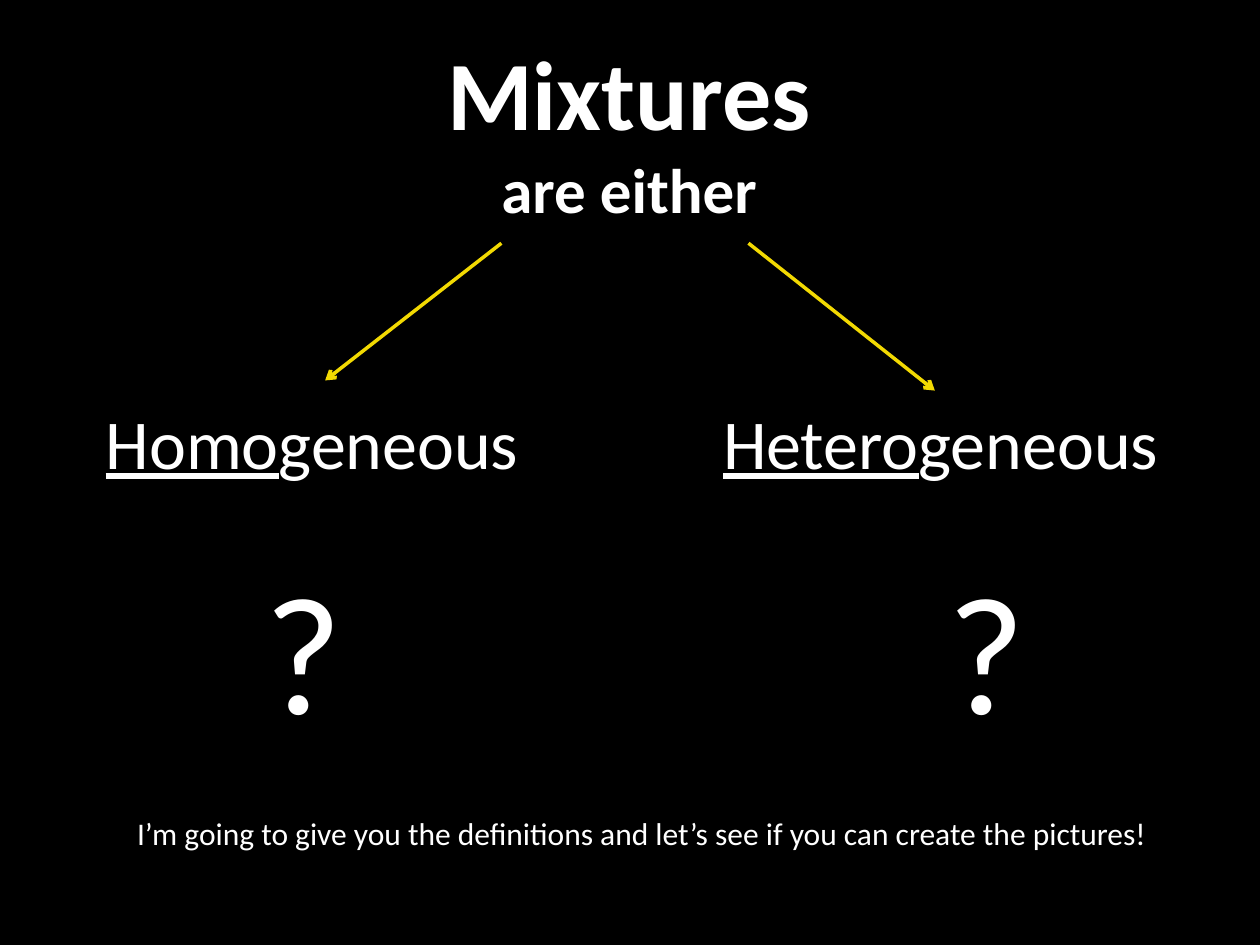
"""Build a slide that splits mixtures into homogeneous and heterogeneous."""
from lxml import etree
from pptx import Presentation
from pptx import util as u
from pptx.dml.color import RGBColor
from pptx.enum import shapes, text
from pptx.oxml.ns import qn

BLACK = RGBColor(0x00, 0x00, 0x00)
WHITE = RGBColor(0xFF, 0xFF, 0xFF)
YELLOW = RGBColor(0xF2, 0xD9, 0x02)
FONT = "Calibri"

TITLE = [("Mixtures", 56), ("are either", 36)]
TITLE_BOX = (61, 8.6, 597, 130.4)
ARROWS = [((286.5, 139), (185.8, 217.4)), ((427.7, 139), (534.2, 223.2))]
KINDS = [
    {"prefix": "Homo", "left": 53.3, "width": 265, "mark_left": 144},
    {"prefix": "Hetero", "left": 406.1, "width": 280, "mark_left": 534.2},
]
SUFFIX = "geneous"
KIND_TOP, KIND_HEIGHT = 224.6, 55.4
MARK_TOP, MARK_WIDTH, MARK_HEIGHT = 308.9, 67, 123.8
PROMPT = "I’m going to give you the definitions and let’s see if you can create the pictures!"
PROMPT_BOX = (71.3, 461.5, 614.2, 28.8)


def points(values):
    return [u.Pt(value) for value in values]


def add_run(paragraph, wording, size, bold=False, underline=False):
    run = paragraph.add_run()
    run.text = wording
    font = run.font
    font.name, font.size, font.bold, font.underline = FONT, u.Pt(size), bold, underline
    font.color.rgb = WHITE


def add_text(slide, box, runs, size, wrap=False):
    frame = slide.shapes.add_textbox(*points(box)).text_frame
    frame.word_wrap = wrap
    frame.auto_size = text.MSO_AUTO_SIZE.SHAPE_TO_FIT_TEXT
    for wording, underline in runs:
        add_run(frame.paragraphs[0], wording, size, underline=underline)


def add_title(slide):
    title = slide.shapes.title
    title.left, title.top, title.width, title.height = points(TITLE_BOX)
    frame = title.text_frame
    frame.vertical_anchor = text.MSO_ANCHOR.MIDDLE
    paragraph = frame.paragraphs[0]
    paragraph.alignment = text.PP_ALIGN.CENTER
    for index, (wording, size) in enumerate(TITLE):
        if index:
            paragraph.add_line_break()
        add_run(paragraph, wording, size, bold=True)


def add_arrow(slide, start, end):
    arrow = slide.shapes.add_connector(
        shapes.MSO_CONNECTOR.STRAIGHT, *points(start + end))
    arrow.line.color.rgb = YELLOW
    arrow.line.width = u.Pt(2)
    etree.SubElement(arrow.line._get_or_add_ln(), qn("a:tailEnd"), type="arrow")
    etree.SubElement(arrow._element.spPr, qn("a:effectLst"))


def main():
    presentation = Presentation()
    presentation.slide_width, presentation.slide_height = points((720, 540))
    slide = presentation.slides.add_slide(presentation.slide_layouts[5])
    slide.background.fill.solid()
    slide.background.fill.fore_color.rgb = BLACK
    add_title(slide)
    for start, end in ARROWS:
        add_arrow(slide, start, end)
    for kind in KINDS:
        add_text(slide, (kind["left"], KIND_TOP, kind["width"], KIND_HEIGHT),
                 [(kind["prefix"], True), (SUFFIX, False)], 40)
        add_text(slide, (kind["mark_left"], MARK_TOP, MARK_WIDTH, MARK_HEIGHT),
                 [("?", False)], 96, wrap=True)
    add_text(slide, PROMPT_BOX, [(PROMPT, False)], 18)
    presentation.save("out.pptx")


if __name__ == "__main__":
    main()
